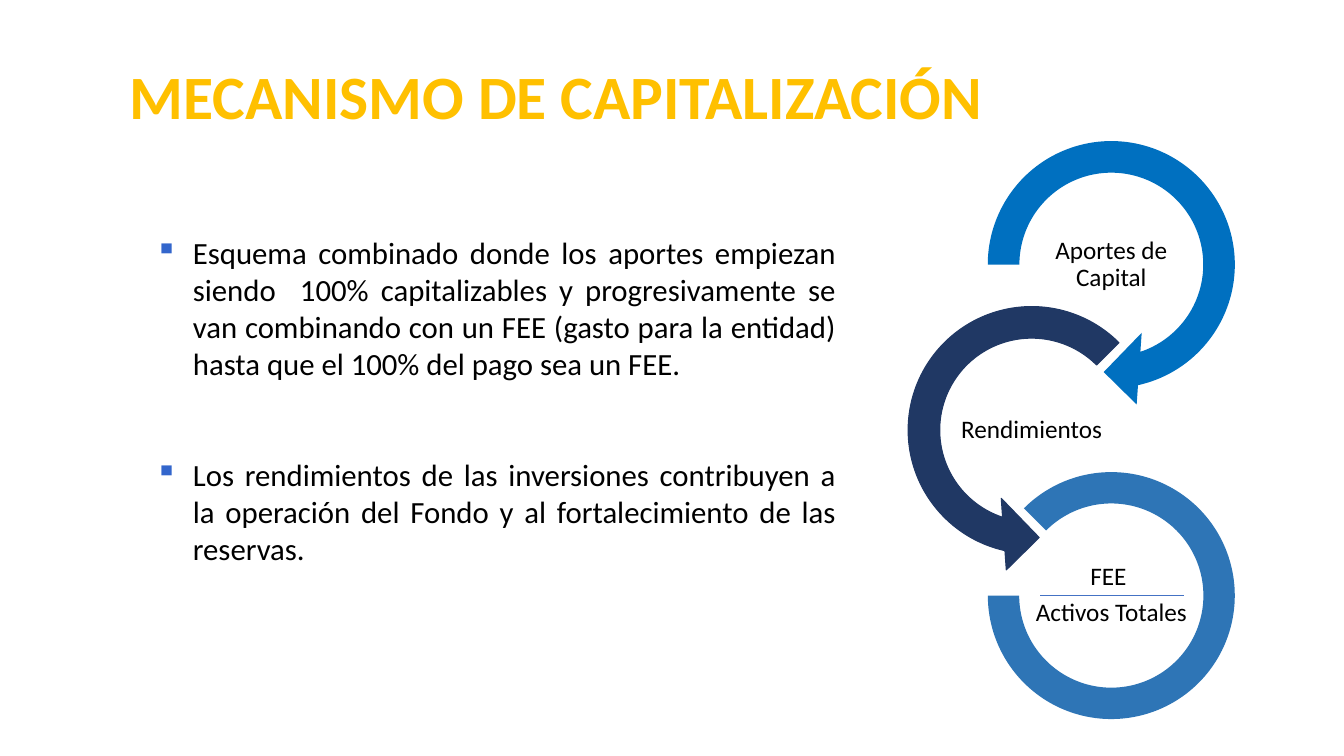
import pptx
import pptx.dml.color
import pptx.enum.shapes
import pptx.enum.text
import pptx.oxml.ns
import pptx.util
from lxml import etree

Pt = pptx.util.Pt
Align = pptx.enum.text.PP_ALIGN
Anchor = pptx.enum.text.MSO_ANCHOR
Shape = pptx.enum.shapes.MSO_SHAPE
qn = pptx.oxml.ns.qn

FONT = "Calibri"
COLORS = {
    "title": "FFC000",
    "text": "000000",
    "bullet": "3366CC",
    "contributions": "0070C0",
    "returns": "203864",
    "fee": "2E75B6",
    "fraction_line": "4472C4",
}
BULLET_INDENT = 27
FIRST_RING_Y = 189
RING_STEP = 118.2
LABEL_WIDTH, LABEL_HEIGHT = 113.8, 56.9

POINTS = [
    "Esquema combinado donde los aportes empiezan siendo  100% capitalizables y "
    "progresivamente se van combinando con un FEE (gasto para la entidad) hasta "
    "que el 100% del pago sea un FEE.",
    "Los rendimientos de las inversiones contribuyen a la operación del Fondo y "
    "al fortalecimiento de las reservas.",
]
# Preset, color, center x, diameter, adjustments, label lines
RINGS = [
    (Shape.CIRCULAR_ARROW, "contributions", 793.8, 205.2,
     (0.11, 11.42, 45, 108, 0.125), ["Aportes de Capital"]),
    (Shape.LEFT_CIRCULAR_ARROW, "returns", 736.9, 205.2,
     (0.11, 11.42, 63, 189, 0.125), ["Rendimientos"]),
    (Shape.BLOCK_ARC, "fee", 793.8, 176.4,
     (135, 108, 0.127), ["FEE ", "Activos Totales"]),
]


def rgb(name):
    return pptx.dml.color.RGBColor.from_string(COLORS[name])


def add_bullet(para):
    properties = para._p.get_or_add_pPr()
    properties.set("marL", str(Pt(BULLET_INDENT)))
    properties.set("indent", str(-Pt(BULLET_INDENT)))
    color = etree.SubElement(properties, qn("a:buClr"))
    etree.SubElement(color, qn("a:srgbClr")).set("val", COLORS["bullet"])
    etree.SubElement(properties, qn("a:buChar")).set("char", "▪")


def add_text(page, lines, left, top, width, height, *, size, color="text",
             bold=False, align=Align.LEFT, anchor=Anchor.TOP, inset=None,
             line_spacing=1.0, gap=0, bullets=False):
    """Add a text box with one paragraph per line, gap points apart."""
    box = page.shapes.add_textbox(Pt(left), Pt(top), Pt(width), Pt(height))
    frame = box.text_frame
    frame.word_wrap = True
    frame.vertical_anchor = anchor
    if inset is not None:
        frame.margin_left = frame.margin_right = Pt(inset)
        frame.margin_top = frame.margin_bottom = Pt(inset)
    for index, line in enumerate(lines):
        para = frame.add_paragraph() if index else frame.paragraphs[0]
        para.alignment = align
        para.line_spacing = line_spacing
        para.space_before = Pt(gap if index else 0)
        if bullets:
            add_bullet(para)
        span = para.add_run()
        span.text = line
        span.font.name = FONT
        span.font.size = Pt(size)
        span.font.bold = bold
        span.font.color.rgb = rgb(color)


def add_ring(page, preset, color, center_x, center_y, diameter, adjustments):
    ring = page.shapes.add_shape(
        preset, Pt(center_x - diameter / 2), Pt(center_y - diameter / 2),
        Pt(diameter), Pt(diameter))
    for index, value in enumerate(adjustments):
        ring.adjustments[index] = value
    ring.shadow.inherit = False
    ring.fill.solid()
    ring.fill.fore_color.rgb = rgb(color)
    if color == "returns":
        ring.line.color.rgb = rgb(color)
        ring.line.width = Pt(0.75)
    else:
        ring.line.fill.background()


def add_line(page, start_x, end_x, y, color, width):
    line = page.shapes.add_connector(
        pptx.enum.shapes.MSO_CONNECTOR.STRAIGHT,
        Pt(start_x), Pt(y), Pt(end_x), Pt(y))
    line.line.color.rgb = rgb(color)
    line.line.width = Pt(width)
    etree.SubElement(line._element.spPr, qn("a:effectLst"))


def main():
    deck = pptx.Presentation()
    deck.slide_width, deck.slide_height = Pt(960), Pt(540)
    page = deck.slides.add_slide(deck.slide_layouts[6])

    add_text(page, ["MECANISMO DE CAPITALIZACIÓN"], 85.7, 18.7, 679.7, 104.4,
             size=44, color="title", bold=True, anchor=Anchor.MIDDLE,
             line_spacing=0.9)
    for index, (preset, color, x, diameter, adjustments, label) in enumerate(RINGS):
        y = FIRST_RING_Y + index * RING_STEP
        add_ring(page, preset, color, x, y, diameter, adjustments)
        add_text(page, label, x - LABEL_WIDTH / 2, y - LABEL_HEIGHT / 2,
                 LABEL_WIDTH, LABEL_HEIGHT, size=18, align=Align.CENTER,
                 anchor=Anchor.MIDDLE, inset=0.9, line_spacing=0.9, gap=6.3)
    add_line(page, 743, 845.5, 425, "fraction_line", 0.5)
    add_text(page, POINTS, 103.7, 163.4, 500.4, 247, size=22,
             align=Align.JUSTIFY, gap=53, bullets=True)

    deck.save("out.pptx")


if __name__ == "__main__":
    main()
